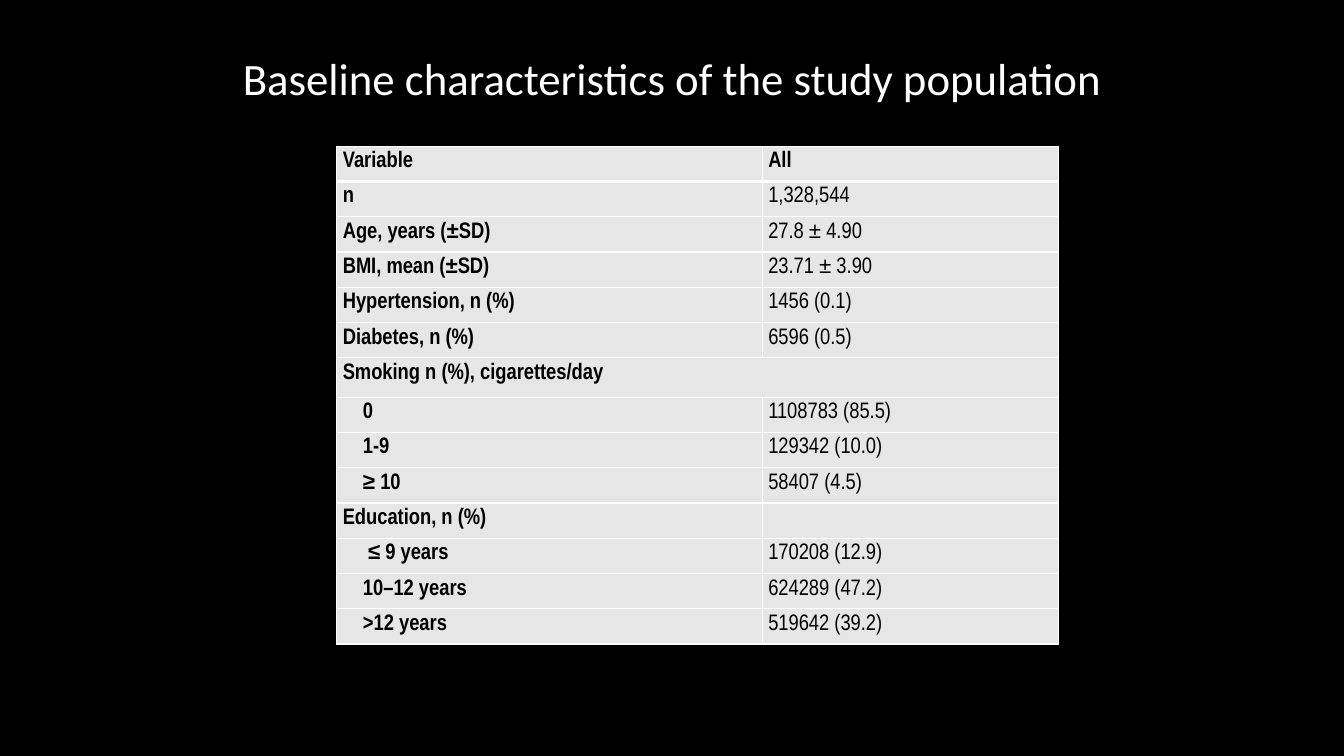
from lxml import etree
from pptx import Presentation
from pptx.dml.color import RGBColor
from pptx.enum.text import MSO_ANCHOR as ANCHOR, PP_ALIGN as ALIGN
from pptx.oxml.ns import qn
from pptx.util import Inches, Pt

BLACK = RGBColor(0x00, 0x00, 0x00)
WHITE = RGBColor(0xFF, 0xFF, 0xFF)
GREY = RGBColor(0xE7, 0xE6, 0xE6)

TITLE = "Baseline characteristics of the study population"
TITLE_FONT = {"name": "Calibri", "size": Pt(32), "bold": False}
CELL_FONT = {"name": "Arial Narrow", "size": Pt(16)}
CELL_PARA = {"line_spacing": 1.25, "space_after": Pt(8)}
PAD, INDENT = 0.06, 0.2
COL_WIDTHS = (4.22, 2.94)
ROW_HEIGHT, SMOKING_HEIGHT = 0.35, 0.39
SMOKING = "Smoking n (%), cigarettes/day"

ROWS = [
    ("Variable", "All", 0),
    ("n", "1,328,544", 0),
    ("Age, years (±SD)", "27.8 ± 4.90", 0),
    ("BMI, mean (±SD)", "23.71 ± 3.90", 0),
    ("Hypertension, n (%)", "1456 (0.1)", 0),
    ("Diabetes, n (%)", "6596 (0.5)", 0),
    (SMOKING, "", 0),
    ("0", "1108783 (85.5)", INDENT),
    ("1-9", "129342 (10.0)", INDENT),
    ("≥ 10", "58407 (4.5)", INDENT),
    ("Education, n (%)", "", 0),
    ("≤ 9 years", "170208 (12.9)", INDENT + 0.05),
    ("10–12 years", "624289 (47.2)", INDENT),
    (">12 years", "519642 (39.2)", INDENT),
]


def set_all(obj, values):
    """Set each attribute of obj named in values."""
    for name, value in values.items():
        setattr(obj, name, value)


def write(p, text, font, color, para):
    """Write text as one formatted run of paragraph p."""
    set_all(p, para)
    r = p.add_run()
    r.text = text
    set_all(r.font, font)
    r.font.color.rgb = color


def add_borders(cell, widths):
    """Draw white borders of the given point widths by side."""
    tcPr = cell._tc.get_or_add_tcPr()
    for side, width in widths.items():
        ln = etree.SubElement(tcPr, qn(f"a:ln{side}"), w=str(Pt(width)))
        fill = etree.SubElement(ln, qn("a:solidFill"))
        etree.SubElement(fill, qn("a:srgbClr"), val=str(WHITE))


def add_title(slide, x, y, w, h):
    """Place the centred slide title in its box."""
    tf = slide.shapes.add_textbox(Inches(x), Inches(y), Inches(w), Inches(h)).text_frame
    set_all(tf, {"word_wrap": True, "vertical_anchor": ANCHOR.MIDDLE})
    write(tf.paragraphs[0], TITLE, TITLE_FONT, WHITE,
          {"alignment": ALIGN.CENTER, "line_spacing": 0.9})


def fill_cell(cell, text, bold, indent, borders):
    """Write and format one table cell."""
    set_all(cell, {"margin_left": Inches(PAD + indent), "margin_right": Inches(PAD),
                   "margin_top": 0, "margin_bottom": 0})
    add_borders(cell, borders)
    cell.fill.solid()
    cell.fill.fore_color.rgb = GREY
    write(cell.text_frame.paragraphs[0], text, {**CELL_FONT, "bold": bold},
          BLACK, CELL_PARA)


def add_baseline_table(slide, x, y, w, h):
    """Place the table of baseline characteristics in its box."""
    table = slide.shapes.add_table(len(ROWS), len(COL_WIDTHS), Inches(x), Inches(y),
                                   Inches(w), Inches(h)).table
    for col, width in zip(table.columns, COL_WIDTHS):
        col.width = Inches(width)
    for i, (label, value, indent) in enumerate(ROWS):
        spans = label == SMOKING
        table.rows[i].height = Inches(SMOKING_HEIGHT if spans else ROW_HEIGHT)
        borders = {"L": 1, "R": 1, "T": 3 if i == 1 else 1, "B": 3 if i == 0 else 1}
        fill_cell(table.cell(i, 0), label, True, indent, borders)
        fill_cell(table.cell(i, 1), value, i == 0, 0, borders)
        if spans:
            table.cell(i, 0).merge(table.cell(i, 1))


def main():
    """Build and save the slide."""
    prs = Presentation()
    set_all(prs, {"slide_width": Inches(13.33), "slide_height": Inches(7.5)})
    slide = prs.slides.add_slide(prs.slide_layouts[6])
    slide.background.fill.solid()
    slide.background.fill.fore_color.rgb = BLACK
    add_title(slide, 0.92, 0.08, 11.5, 1.45)
    add_baseline_table(slide, 3.34, 1.45, sum(COL_WIDTHS), 4.94)
    prs.save("out.pptx")


if __name__ == "__main__":
    main()
